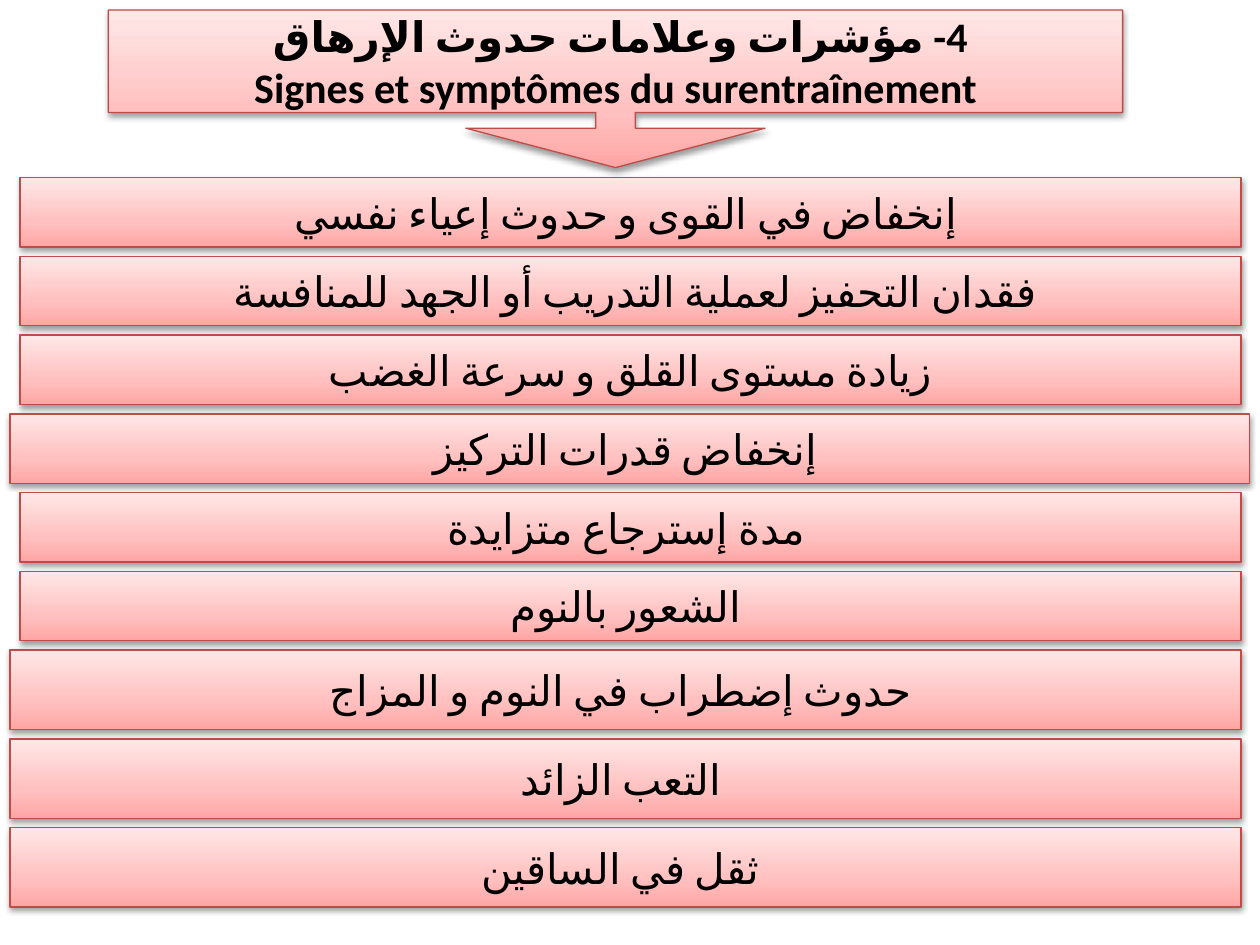
"""Build a slide listing the signs of overtraining as stacked gradient bars."""
from copy import deepcopy

from lxml.etree import SubElement
from pptx import Presentation
from pptx.dml.color import RGBColor
from pptx.enum.shapes import MSO_SHAPE as Shape
from pptx.enum.text import MSO_ANCHOR as Anchor, PP_ALIGN as Align
from pptx.oxml.ns import qn
from pptx.util import Inches, Pt

FONT = "Calibri"
COLORS = {
    "deep": "FFA6A5",
    "middle": "FFC0BF",
    "pale": "FFE7E7",
    "border": "BF4C48",
    "text": "000000",
    "shadow": "000000",
}
GRADIENT = [(0, "deep"), (0.35, "middle"), (1, "pale")]
TITLE_LINES = [
    ("4- مؤشرات وعلامات حدوث الإرهاق ", True),
    ("Signes et symptômes du surentraînement", True),
]
SIGNS = [
    ("إنخفاض في القوى و حدوث إعياء نفسي ", False, 0.16, 9.69, 0.55),
    ("فقدان التحفيز لعملية التدريب أو الجهد للمنافسة ", True, 0.16, 9.69, 0.55),
    ("زيادة مستوى القلق و سرعة الغضب", False, 0.16, 9.69, 0.55),
    ("إنخفاض قدرات التركيز ", False, 0.08, 9.84, 0.55),
    ("مدة إسترجاع متزايدة ", False, 0.16, 9.69, 0.55),
    ("الشعور بالنوم ", False, 0.16, 9.69, 0.55),
    ("حدوث إضطراب في النوم و المزاج ", False, 0.08, 9.77, 0.63),
    ("التعب الزائد ", False, 0.08, 9.77, 0.63),
    ("ثقل في الساقين ", False, 0.08, 9.77, 0.63),
]
FIRST_TOP = 1.41
GAP = 0.075


def rgb(name):
    """Return the named palette colour."""
    return RGBColor.from_string(COLORS[name])


def fill_gradient(shape):
    """Fill a shape with the three-stop gradient, palest at the top."""
    shape.fill.gradient()
    shape.fill.gradient_angle = 90
    stop_list = shape._element.spPr.find(qn("a:gradFill")).find(qn("a:gsLst"))
    stop_list.insert(1, deepcopy(stop_list[0]))
    for stop, (position, color) in zip(shape.fill.gradient_stops, GRADIENT):
        stop.position = position
        stop.color.rgb = rgb(color)


def add_shadow(shape):
    """Give a shape a soft shadow straight below it."""
    shape.shadow.inherit = False
    effects = shape._element.spPr.find(qn("a:effectLst"))
    shadow = SubElement(effects, qn("a:outerShdw"), blurRad=str(Pt(3.1)),
                        dist=str(Pt(1.6)), dir="5400000", rotWithShape="0")
    color = SubElement(shadow, qn("a:srgbClr"), val=COLORS["shadow"])
    SubElement(color, qn("a:alpha"), val="38000")


def style_run(run, bold):
    """Set the font for both Latin and Arabic letters."""
    run.font.name = FONT
    run.font.size = Pt(24)
    run.font.bold = bold
    run.font.color.rgb = rgb("text")
    properties = run._r.get_or_add_rPr()
    properties.set("lang", "ar-DZ")
    SubElement(properties, qn("a:cs"), typeface=FONT)


def add_text(shape, lines, bold):
    """Write centred lines, each one a text with its right-to-left flag."""
    frame = shape.text_frame
    frame.word_wrap = True
    frame.vertical_anchor = Anchor.MIDDLE
    for index, (text, right_to_left) in enumerate(lines):
        paragraph = frame.add_paragraph() if index else frame.paragraphs[0]
        paragraph.alignment = Align.CENTER
        if right_to_left:
            paragraph._p.get_or_add_pPr().set("rtl", "1")
        run = paragraph.add_run()
        run.text = text
        style_run(run, bold)


def add_panel(slide, kind, box, lines, bold=False):
    """Add a bordered gradient shape with text."""
    shape = slide.shapes.add_shape(kind, *map(Inches, box))
    fill_gradient(shape)
    shape.line.color.rgb = rgb("border")
    shape.line.width = Pt(0.75)
    add_shadow(shape)
    add_text(shape, lines, bold)
    return shape


def add_title(slide):
    """Add the title callout with its arrow pointing at the list."""
    callout = add_panel(slide, Shape.DOWN_ARROW_CALLOUT,
                        (0.86, 0.08, 8.05, 1.25), TITLE_LINES, bold=True)
    for index, value in enumerate((0.25, 0.95, 0.25, 0.65)):
        callout.adjustments[index] = value


def add_signs(slide):
    """Stack one bar per sign with equal gaps."""
    top = FIRST_TOP
    for text, right_to_left, left, width, height in SIGNS:
        add_panel(slide, Shape.RECTANGLE, (left, top, width, height),
                  [(text, right_to_left)])
        top += height + GAP


def main():
    """Create and save the presentation."""
    presentation = Presentation()
    presentation.slide_width = Inches(10)
    presentation.slide_height = Inches(7.5)
    slide = presentation.slides.add_slide(presentation.slide_layouts[6])
    add_title(slide)
    add_signs(slide)
    presentation.save("out.pptx")


if __name__ == "__main__":
    main()
